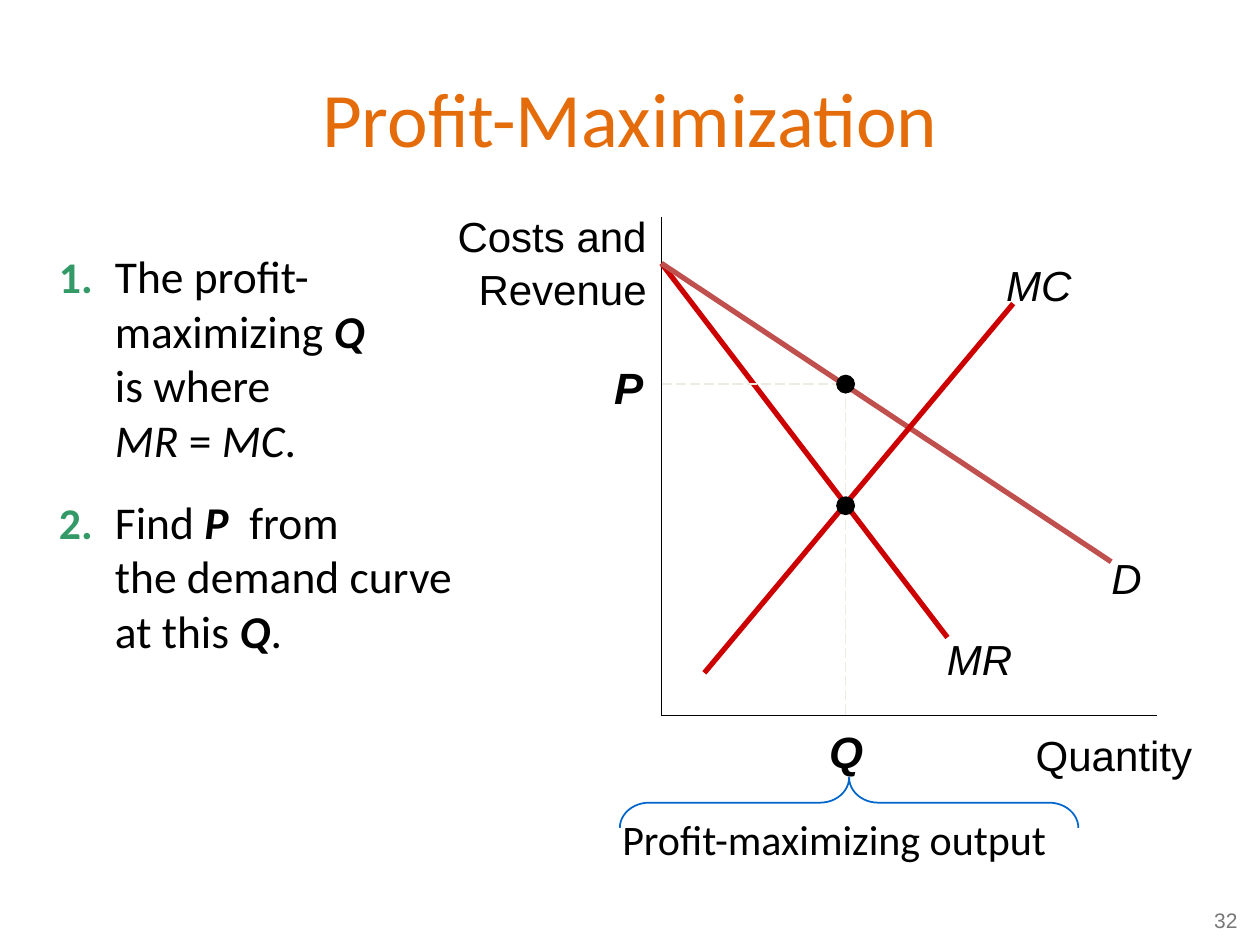
from dataclasses import dataclass
from typing import NamedTuple

from lxml.etree import SubElement
from pptx import Presentation
from pptx.dml.color import RGBColor
from pptx.enum.dml import MSO_LINE
from pptx.enum.shapes import MSO_CONNECTOR, MSO_SHAPE
from pptx.enum.text import MSO_ANCHOR, PP_ALIGN
from pptx.oxml.ns import qn
from pptx.util import Pt


class Box(NamedTuple):
    left: float
    top: float
    width: float
    height: float

    def inner(self, left, top, width, height):
        """Return a box whose place is measured from this box's corner."""
        return Box(self.left + left, self.top + top, width, height)


@dataclass(frozen=True)
class Theme:
    heading: str = "E46C0A"
    number: str = "339966"
    ink: str = "000000"
    muted: str = "777777"
    curve: str = "CC0000"
    demand: str = "C0504D"
    guide: str = "EEECE1"
    brace: str = "0066CC"
    body_font: str = "Calibri"
    label_font: str = "Arial"
    title_size: int = 44
    body_size: int = 26
    strong_size: int = 25
    label_size: int = 24
    page_size: int = 12


THEME = Theme()
BODY = dict(name=THEME.body_font, size=THEME.body_size, color=THEME.ink, bold=False, italic=False)
NUMBER = BODY | dict(size=THEME.strong_size, color=THEME.number, bold=True)
LABEL = BODY | dict(name=THEME.label_font, size=THEME.label_size)
CURVE_LABEL = LABEL | dict(italic=True)
POINT_LABEL = LABEL | dict(size=THEME.strong_size, bold=True, italic=True)

PLAIN, ITALIC, STRONG = BODY, BODY | dict(italic=True), BODY | dict(bold=True, italic=True)
STEPS = [
    [("The profit-maximizing ", PLAIN), ("Q \v", STRONG), ("is where\v", PLAIN),
     ("MR", ITALIC), (" = ", PLAIN), ("MC", ITALIC), (".", PLAIN)],
    [("Find ", PLAIN), ("P", STRONG), ("  from \vthe demand curve at this ", PLAIN),
     ("Q", STRONG), (".", PLAIN)],
]


def add_span(para, text, style):
    for index, part in enumerate(text.split("\v")):
        if index:
            para.add_line_break()
        if not part:
            continue
        span = para.add_run()
        span.text = part
        for key, value in style.items():
            if key == "color":
                span.font.color.rgb = RGBColor.from_string(value)
            else:
                setattr(span.font, key, Pt(value) if key == "size" else value)


def add_frame(page, box, **settings):
    frame = page.shapes.add_textbox(*map(Pt, box)).text_frame
    for key, value in (dict(word_wrap=True) | settings).items():
        setattr(frame, key, value)
    return frame


def add_text(page, box, text, style, align=PP_ALIGN.CENTER, spacing=None, **settings):
    para = add_frame(page, box, **settings).paragraphs[0]
    para.alignment = align
    para.line_spacing = spacing
    add_span(para, text, style)


def add_line(page, box, start, end, color, width=0.75, dash=None):
    """Draw a line between two points measured from the box's corner."""
    points = [Pt(edge + offset) for point in (start, end)
              for edge, offset in zip(box[:2], point)]
    line = page.shapes.add_connector(MSO_CONNECTOR.STRAIGHT, *points)
    line.line.color.rgb = RGBColor.from_string(color)
    line.line.width = Pt(width)
    line.line.dash_style = dash
    SubElement(line._element.spPr, qn("a:effectLst"))


def add_dot(page, box, center, diameter=10.8):
    corner = [offset - diameter / 2 for offset in center]
    dot = page.shapes.add_shape(
        MSO_SHAPE.OVAL, *map(Pt, box.inner(*corner, diameter, diameter)))
    dot.shadow.inherit = False
    dot.fill.solid()
    dot.fill.fore_color.rgb = RGBColor.from_string(THEME.ink)
    dot.line.fill.background()


def add_title(page, box):
    add_text(page, box, "Profit-Maximization",
             BODY | dict(size=THEME.title_size, color=THEME.heading),
             vertical_anchor=MSO_ANCHOR.MIDDLE)


def add_page_number(page, box):
    add_text(page, box, "32", LABEL | dict(size=THEME.page_size, color=THEME.muted),
             PP_ALIGN.RIGHT, vertical_anchor=MSO_ANCHOR.MIDDLE)


def add_steps(page, box):
    """Write the numbered steps with a hanging indent."""
    frame = add_frame(page, box)
    for number, spans in enumerate(STEPS, 1):
        para = frame.paragraphs[0] if number == 1 else frame.add_paragraph()
        properties = para._p.get_or_add_pPr()
        properties.set("marL", str(Pt(32)))
        properties.set("indent", str(-Pt(32)))
        if number > 1:
            para.space_before = Pt(0.6 * THEME.body_size)
        add_span(para, f"{number}.\t", NUMBER)
        for text, style in spans:
            add_span(para, text, style)


def add_diagram(page, box):
    """Draw the axes, the three curves and the profit-maximizing point."""
    origin = (0, box.height)
    add_line(page, box, (0, 0), origin, THEME.ink)
    add_line(page, box, origin, (box.width, box.height), THEME.ink)

    intercept = (0, 26.5)
    for start, end, color in [
        (intercept, (163.4, 240.3), THEME.curve),
        (intercept, (257, 197), THEME.demand),
        ((24.5, 260.5), (201, 49.5), THEME.curve),
    ]:
        add_line(page, box, start, end, color, 3)

    output, price, marginal = 105.2, 95.5, 165
    demand_point, crossing = (output, price), (output, marginal)
    for start, end in [((0, price), demand_point), (demand_point, crossing),
                       (crossing, (output, box.height))]:
        add_line(page, box, start, end, THEME.guide, dash=MSO_LINE.LONG_DASH)
    for center in (demand_point, crossing):
        add_dot(page, box, center)

    tight = dict.fromkeys(("margin_left", "margin_top", "margin_right", "margin_bottom"), 0)
    center, right = PP_ALIGN.CENTER, PP_ALIGN.RIGHT
    for text, place, style, align, margins in [
        ("Quantity", (205.2, 291.4, 98, 28.8), LABEL, right, tight),
        ("Costs and Revenue", (-126.7, -8.8, 125.3, 64.8), LABEL, right, {}),
        ("MR", (158.4, 236.7, 46.8, 28.8), CURVE_LABEL, center, tight),
        ("D", (248.4, 190.6, 34.6, 28.8), CURVE_LABEL, center, tight),
        ("MC", (192.2, 22.9, 46.8, 28.8), CURVE_LABEL, center, tight),
        ("P", (-34.6, 76.9, 31.7, 37.4), POINT_LABEL, center, {}),
        ("Q", (85, 285, 41, 37.4), POINT_LABEL, center, {}),
    ]:
        add_text(page, box.inner(*place), text, style, align, 1.05, **margins)


def add_output_note(page, box):
    """Draw an upward brace filling the box, with its caption below."""
    add_text(page, box.inner(-5.7, 17.2, 272.2, 36), "Profit-maximizing output",
             BODY | dict(size=THEME.label_size), PP_ALIGN.LEFT, word_wrap=False)
    shift = (box.width - box.height) / 2
    upright = box.inner(shift, -shift, box.height, box.width)
    brace = page.shapes.add_shape(MSO_SHAPE.LEFT_BRACE, *map(Pt, upright))
    brace.rotation = 90
    brace.adjustments[0] = 0.58
    brace.shadow.inherit = False
    brace.fill.background()
    brace.line.color.rgb = RGBColor.from_string(THEME.brace)
    brace.line.width = Pt(1)


def main():
    deck = Presentation()
    deck.slide_width, deck.slide_height = Pt(720), Pt(540)
    page = deck.slides.add_slide(deck.slide_layouts[6])
    add_page_number(page, Box(432, 511.2, 282.2, 28.8))
    add_title(page, Box(36, 21.6, 648, 90))
    add_steps(page, Box(26.6, 138.2, 242.6, 344.2))
    add_diagram(page, Box(378, 124, 283, 285))
    add_output_note(page, Box(354.2, 444.3, 262, 28.8))
    deck.save("out.pptx")


if __name__ == "__main__":
    main()
